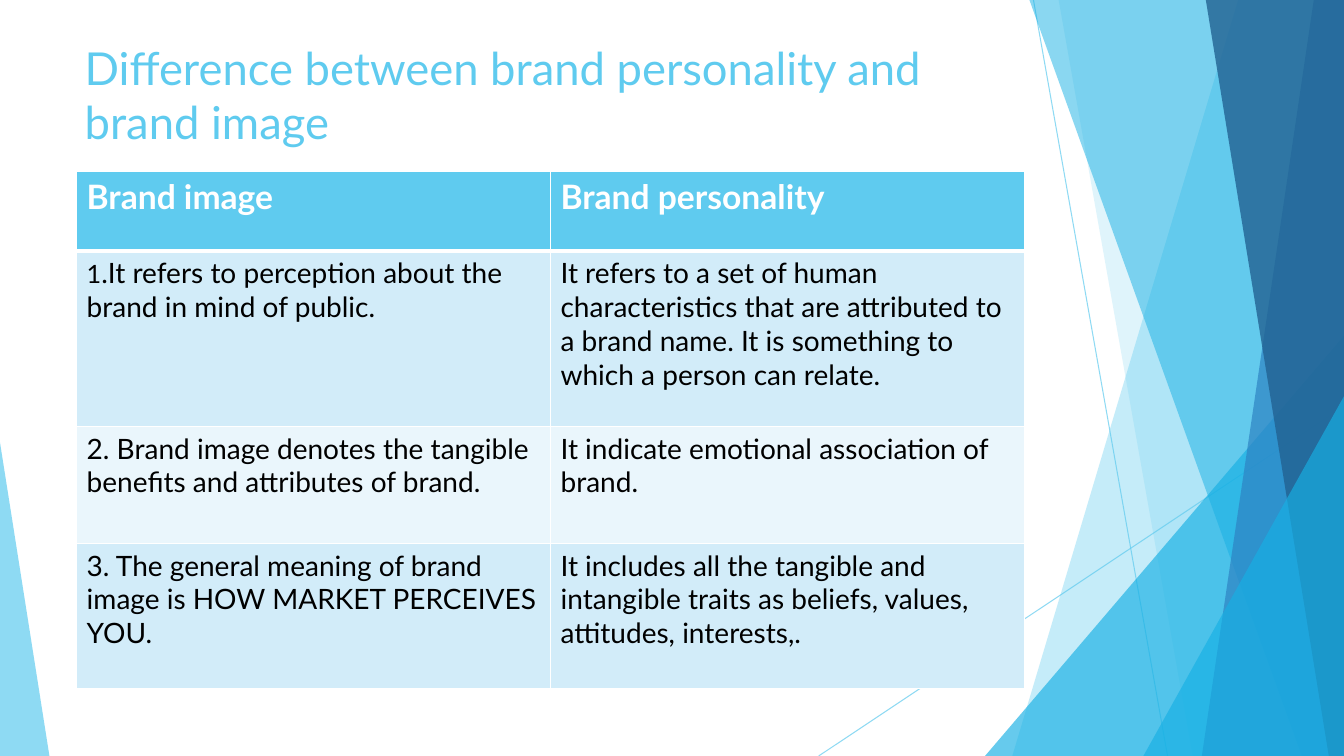
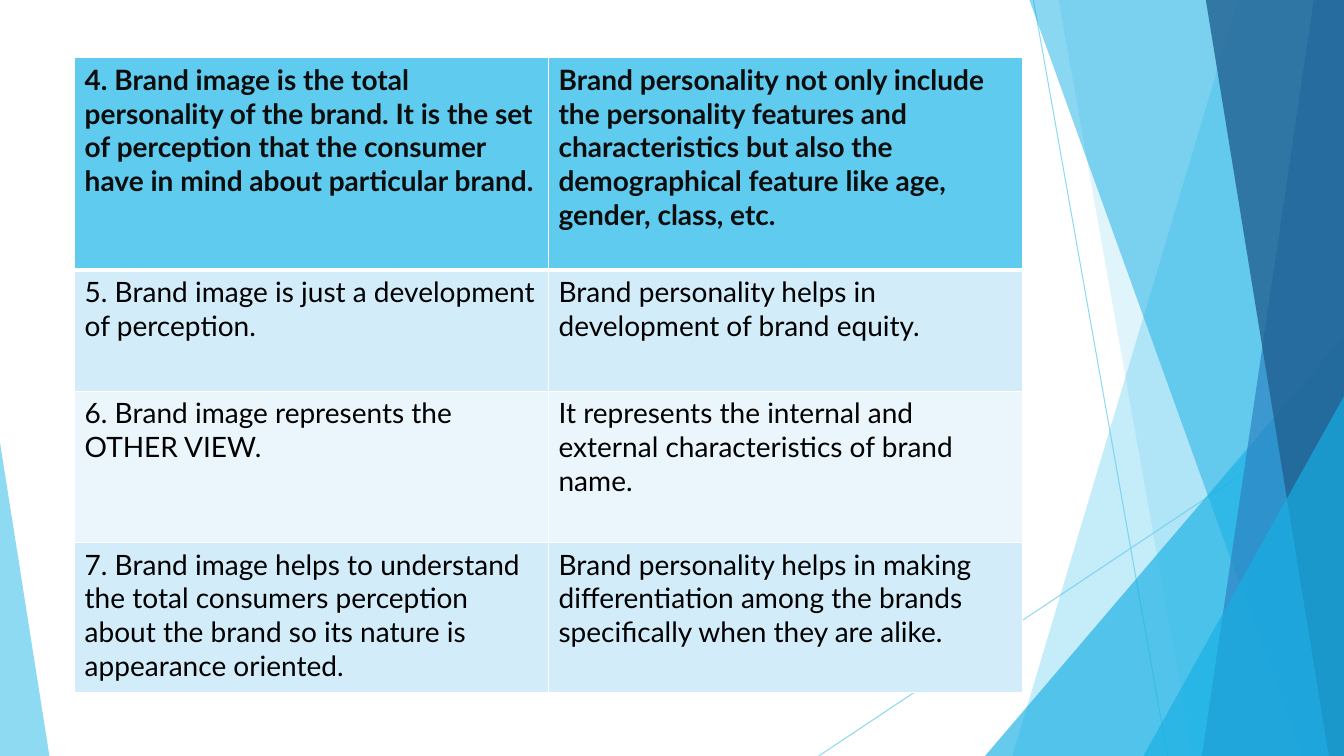
from pptx import Presentation
from pptx.dml.color import RGBColor
from pptx.enum import shapes, text
from pptx.oxml import ns, parse_xml
from pptx.util import Inches, Pt

FONT = "Lato"
SKY, CYAN, BLUE, NAVY = "5FCBEF", "17B0E4", "2E83C3", "226292"
WHITE, BLACK, INK = "FFFFFF", "000000", "0D0D0D"
BANDS = ["D2ECF9", "EAF6FC"]
WIDTH, HEIGHT = 13.33, 7.5


def color(value):
    return RGBColor.from_string(value)


def set_alpha(shape, percent):
    for node in shape.element.spPr.iter(ns.qn("a:srgbClr")):
        node.append(parse_xml(f'<a:alpha {ns.nsdecls("a")} val="{percent * 1000}"/>'))


def add_span(para, words, size, tint, bold=False):
    span = para.add_run()
    span.text = words
    span.font.name = FONT
    span.font.size = Pt(size)
    span.font.bold = bold
    span.font.color.rgb = color(tint)


def paint(shape, tint, alpha):
    shape.shadow.inherit = False
    shape.fill.solid()
    shape.fill.fore_color.rgb = color(tint)
    shape.line.fill.background()
    set_alpha(shape, alpha)


def add_ray(group, start, end):
    ray = group.shapes.add_connector(
        shapes.MSO_CONNECTOR.STRAIGHT, *map(Inches, start + end))
    ray.line.color.rgb = color(SKY)
    ray.line.width = Pt(0.75)
    set_alpha(ray, 70)
    ray.element.spPr.append(parse_xml(f'<a:effectLst {ns.nsdecls("a")}/>'))


def add_blade(group, top_left, bottom_left, tint, alpha):
    corners = [(top_left, 0), (WIDTH, 0), (WIDTH, HEIGHT), (bottom_left, HEIGHT)]
    points = [(Inches(x), Inches(y)) for x, y in corners]
    builder = group.shapes.build_freeform(*points[0])
    builder.add_line_segments(points[1:], close=True)
    paint(builder.convert_to_shape(), tint, alpha)


def add_wedge(group, left, top, width, peak, tint, alpha):
    wedge = group.shapes.add_shape(
        shapes.MSO_SHAPE.ISOSCELES_TRIANGLE,
        *map(Inches, (left, top, width, HEIGHT - top)))
    wedge.adjustments[0] = peak
    paint(wedge, tint, alpha)


def decorate_master(deck, page):
    group = page.shapes.add_group_shape()
    add_ray(group, (10.25, 0), (11.58, HEIGHT))
    add_ray(group, (WIDTH, 4.03), (8.12, HEIGHT))
    add_blade(group, 12.28, 10.04, SKY, 36)
    add_blade(group, 10.5, 11.83, SKY, 20)
    add_wedge(group, 9.77, 3.33, 3.56, 1, CYAN, 66)
    add_blade(group, 10.21, 12.91, CYAN, 50)
    add_blade(group, 13.03, 11.92, BLUE, 70)
    add_blade(group, 11.96, 13.18, NAVY, 80)
    add_wedge(group, 11.34, 3.93, 1.99, 1, CYAN, 66)
    add_wedge(group, 0, 4.39, 0.49, 0, SKY, 70)
    deck.slide_master.shapes.element.insert(2, group.element)


def set_title(page, box, words):
    title = page.shapes.title
    title.left, title.top, title.width, title.height = map(Inches, box)
    frame = title.text_frame
    frame.word_wrap = True
    frame.auto_size = text.MSO_AUTO_SIZE.NONE
    frame.vertical_anchor = text.MSO_ANCHOR.MIDDLE
    para = frame.paragraphs[0]
    para.alignment = text.PP_ALIGN.LEFT
    add_span(para, words, 32.4, SKY)


def set_borders(cell, top, bottom):
    properties = cell._tc.get_or_add_tcPr()
    sides = [("L", 1), ("R", 1), ("T", top), ("B", bottom)]
    for index, (side, points) in enumerate(sides):
        properties.insert(index, parse_xml(
            f'<a:ln{side} {ns.nsdecls("a")} w="{Pt(points)}"><a:solidFill>'
            f'<a:srgbClr val="{WHITE}"/></a:solidFill></a:ln{side}>'))


def add_comparison(page, box, heights, rows, head_size, head_tint):
    table = page.shapes.add_table(len(rows), 2, *map(Inches, box)).table
    for column in table.columns:
        column.width = Inches(box[2] / 2)
    for index, (height, row) in enumerate(zip(heights, rows)):
        table.rows[index].height = Inches(height)
        is_head = index == 0
        for cell, spans in zip(table.rows[index].cells, row):
            cell.fill.solid()
            cell.fill.fore_color.rgb = color(SKY if is_head else BANDS[(index - 1) % 2])
            set_borders(cell, 3 if index == 1 else 1, 3 if is_head else 1)
            para = cell.text_frame.paragraphs[0]
            for words, size in [(spans, 20)] if isinstance(spans, str) else spans:
                if is_head:
                    add_span(para, words, head_size, head_tint, True)
                else:
                    add_span(para, words, size, BLACK)


def main():
    deck = Presentation()
    deck.slide_width, deck.slide_height = Inches(WIDTH), Inches(HEIGHT)

    page = deck.slides.add_slide(deck.slide_layouts[5])
    decorate_master(deck, page)
    set_title(page, (0.74, 0.34, 9.4, 1.19),
              "Difference between brand personality and brand image")
    add_comparison(page, (0.76, 1.7, 9.4, 5.13), [0.79, 1.74, 1.16, 1.44], [
        ("Brand image", "Brand personality"),
        ([("1", 18), (".It refers to perception about the brand in mind of public.", 20)],
         "It refers to a set of human characteristics that are attributed to a brand name. "
         "It is something to which a person can relate."),
        ("2. Brand image denotes the tangible benefits and attributes of brand.",
         "It indicate emotional association of brand."),
        ("3. The general meaning of brand image is HOW MARKET PERCEIVES YOU.",
         "It includes all the tangible and intangible traits as beliefs, values, "
         "attitudes, interests,."),
    ], 24, WHITE)

    page = deck.slides.add_slide(deck.slide_layouts[6])
    add_comparison(page, (0.74, 0.57, 9.4, 6.3), [2.11, 1.2, 1.5, 1.49], [
        ("4. Brand image is the total personality of the brand. It is the set of perception "
         "that the consumer have in mind about particular brand.",
         "Brand personality not only include the personality features and characteristics "
         "but also the demographical feature like age, gender, class, etc."),
        ("5. Brand image is just a development of perception.",
         "Brand personality helps in development of brand equity."),
        ("6. Brand image represents the OTHER VIEW.",
         "It represents the internal and external characteristics of brand name."),
        ("7. Brand image helps to understand the total consumers perception about the brand "
         "so its nature is appearance oriented.",
         "Brand personality helps in making differentiation among the brands specifically "
         "when they are alike."),
    ], 20, INK)

    deck.save("out.pptx")


if __name__ == "__main__":
    main()
